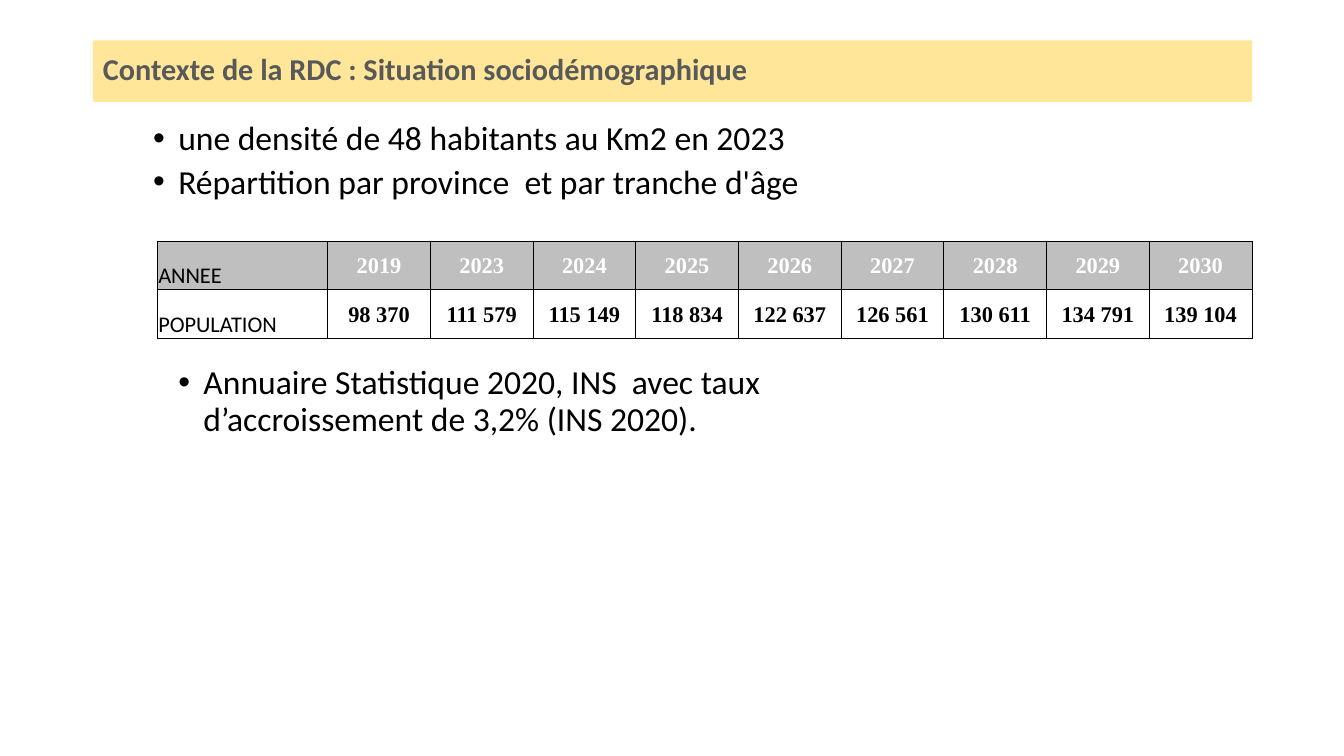
from dataclasses import dataclass

from lxml import etree
from pptx import Presentation
from pptx.dml.color import RGBColor
from pptx.enum.text import MSO_ANCHOR, MSO_AUTO_SIZE, PP_ALIGN
from pptx.oxml.ns import qn
from pptx.util import Inches, Pt

LEFT, CENTER = PP_ALIGN.LEFT, PP_ALIGN.CENTER
MIDDLE, BOTTOM = MSO_ANCHOR.MIDDLE, MSO_ANCHOR.BOTTOM
NO_FIT = MSO_AUTO_SIZE.NONE
TITLE_ONLY = 5


@dataclass(frozen=True)
class Theme:
    body_font: str = "Calibri"
    number_font: str = "Times New Roman"
    title_size: float = 21.6
    body_size: float = 24
    table_size: float = 16
    black: str = "000000"
    white: str = "FFFFFF"
    title_text: str = "595959"
    title_fill: str = "FFE699"
    header_fill: str = "BFBFBF"
    border_width: float = 0.5


class SlideBuilder:
    def __init__(self, prs, theme):
        self.theme = theme
        self.s = prs.slides.add_slide(prs.slide_layouts[TITLE_ONLY])

    def apply(self, target, values):
        for name, value in values.items():
            setattr(target, name, value)

    def box(self, left, top, width, height):
        values = dict(left=left, top=top, width=width, height=height)
        return {name: Inches(value) for name, value in values.items()}

    def add_text(self, p, text, color, size, font, bold=False, **layout):
        self.apply(p, layout)
        r = p.add_run()
        r.text = text
        self.apply(r.font, dict(name=font, size=Pt(size), bold=bold))
        r.font.color.rgb = RGBColor.from_string(color)

    def paint(self, target, color):
        target.fill.solid()
        target.fill.fore_color.rgb = RGBColor.from_string(color)

    def title(self, text, *place):
        t = self.theme
        sp = self.s.shapes.title
        self.apply(sp, self.box(*place))
        self.paint(sp, t.title_fill)
        tf = sp.text_frame
        self.apply(tf, dict(word_wrap=True, auto_size=NO_FIT, vertical_anchor=MIDDLE))
        self.add_text(tf.paragraphs[0], text, t.title_text, t.title_size, t.body_font,
                      bold=True, alignment=LEFT, line_spacing=0.9)

    def bullets(self, lines, place, indent, before):
        t = self.theme
        sp = self.s.shapes.add_textbox(**self.box(*place))
        tf = sp.text_frame
        self.apply(tf, dict(word_wrap=True, auto_size=NO_FIT))
        for i, line in enumerate(lines):
            p = tf.add_paragraph() if i else tf.paragraphs[0]
            self.add_text(p, line, t.black, t.body_size, t.body_font,
                          line_spacing=0.9, space_before=Pt(before))
            pPr = p._p.get_or_add_pPr()
            pPr.set("marL", str(Inches(indent)))
            pPr.set("indent", str(Inches(-0.25)))
            etree.SubElement(pPr, qn("a:buFont"), typeface="Arial")
            etree.SubElement(pPr, qn("a:buChar"), char="•")

    def borders(self, cell):
        tcPr = cell._tc.get_or_add_tcPr()
        for side in ("lnL", "lnR", "lnT", "lnB"):
            ln = etree.SubElement(tcPr, qn(f"a:{side}"), w=str(Pt(self.theme.border_width)))
            fill = etree.SubElement(ln, qn("a:solidFill"))
            etree.SubElement(fill, qn("a:srgbClr"), val=self.theme.black)

    def table(self, rows, place, label_width):
        t = self.theme
        count = len(rows[0])
        table = self.s.shapes.add_table(len(rows), count, **self.box(*place)).table
        year_width = (place[2] - label_width) / (count - 1)
        for i, column in enumerate(table.columns):
            column.width = Inches(year_width if i else label_width)
        margins = dict(margin_left=Inches(0.01), margin_right=Inches(0.01),
                       margin_top=Inches(0.01), margin_bottom=0)
        styles = [(t.header_fill, t.white), (t.white, t.black)]
        for i, (row, (fill, number_color)) in enumerate(zip(rows, styles)):
            for j, text in enumerate(row):
                cell = table.cell(i, j)
                self.borders(cell)
                self.paint(cell, fill)
                self.apply(cell, dict(margins, vertical_anchor=MIDDLE if j else BOTTOM))
                self.add_text(cell.text_frame.paragraphs[0], text,
                              number_color if j else t.black, t.table_size,
                              t.number_font if j else t.body_font,
                              bold=j > 0, alignment=CENTER if j else LEFT)


def main():
    prs = Presentation()
    prs.slide_width, prs.slide_height = Inches(13.33), Inches(7.5)
    slide = SlideBuilder(prs, Theme())
    slide.title("Contexte de la RDC : Situation sociodémographique", 0.92, 0.4, 11.5, 0.61)
    slide.bullets(["une densité de 48 habitants au Km2 en 2023",
                   "Répartition par province  et par tranche d'âge"],
                  (0.92, 1.16, 11.5, 1.23), indent=0.75, before=5)
    slide.table([["ANNEE", "2019", "2023", "2024", "2025", "2026",
                  "2027", "2028", "2029", "2030"],
                 ["POPULATION", "98 370", "111 579", "115 149", "118 834", "122 637",
                  "126 561", "130 611", "134 791", "139 104"]],
                (1.56, 2.39, 10.86, 0.97), label_width=1.69)
    slide.bullets(["Annuaire Statistique 2020, INS  avec taux d’accroissement de 3,2% (INS 2020)."],
                  (1.67, 3.58, 6.66, 0.34), indent=0.25, before=10)
    prs.save("out.pptx")


if __name__ == "__main__":
    main()
